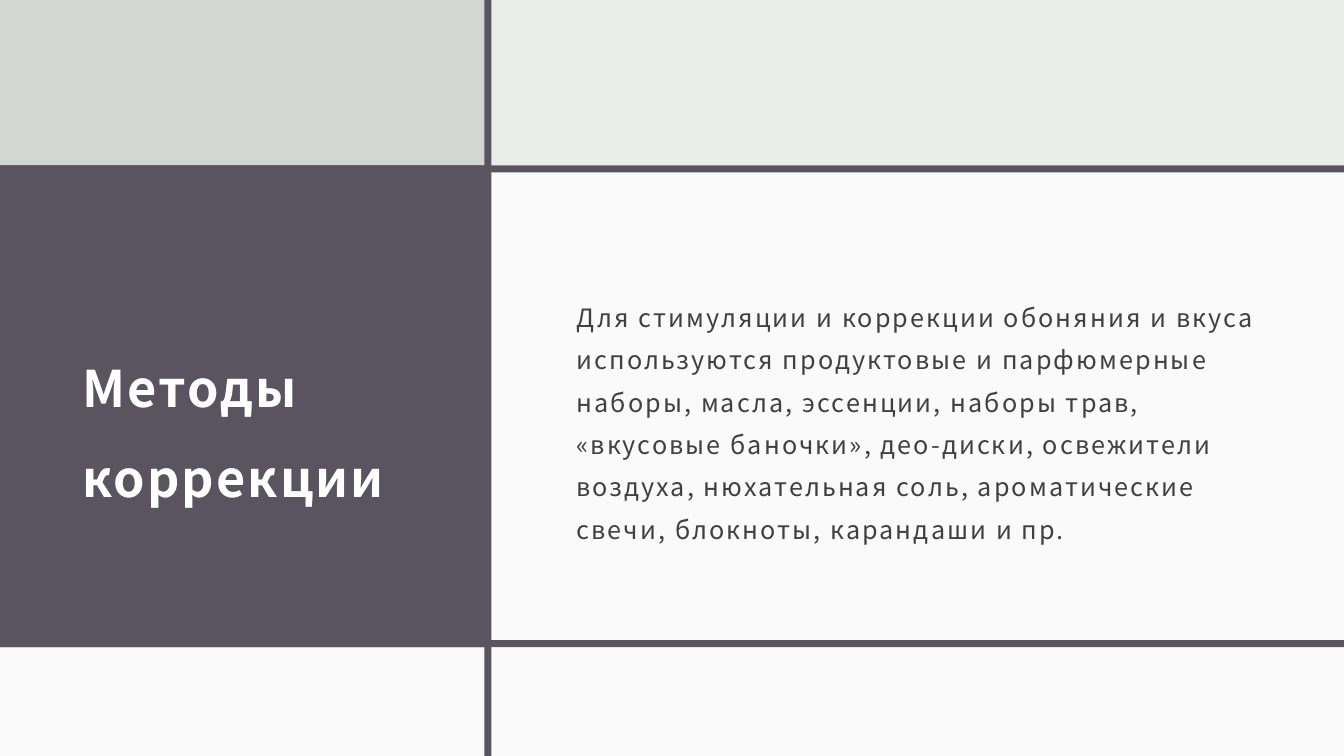
import pptx
import pptx.util
import pptx.dml.color
import pptx.enum.shapes
import pptx.enum.text

Pt = pptx.util.Pt
FONT = "Noto Sans CJK JP"
WIDTH, HEIGHT = 960, 540
RULE = 5.04
COLUMN = 348.5                          # centre of the vertical rule
TOP_RULE, BOTTOM_RULE = 118.08, 457.2   # upper edges of the horizontal rules
DARK, SAGE, MIST, PALE = "595460", "D2D7D2", "EBEDEB", "FAFAFA"


def color(value):
    return pptx.dml.color.RGBColor.from_string(value)


def add_panel(slide, left, top, width, height, fill):
    shape = slide.shapes.add_shape(
        pptx.enum.shapes.MSO_SHAPE.RECTANGLE,
        Pt(left), Pt(top), Pt(width), Pt(height))
    shape.shadow.inherit = False
    shape.fill.solid()
    shape.fill.fore_color.rgb = color(fill)
    shape.line.fill.background()


def add_text(slide, text, left, top, width, height, *, size, fill,
             line_spacing, bold=False, space_before=0, tracking=1.5):
    frame = slide.shapes.add_textbox(
        Pt(left), Pt(top), Pt(width), Pt(height)).text_frame
    frame.word_wrap = True
    frame.vertical_anchor = pptx.enum.text.MSO_ANCHOR.MIDDLE
    frame.margin_left = frame.margin_right = frame.margin_top = Pt(8.64)
    frame.margin_bottom = Pt(7.2)
    paragraph = frame.paragraphs[0]
    paragraph.line_spacing = line_spacing
    paragraph.space_before = Pt(space_before)
    run = paragraph.add_run()
    run.text = text
    run.font.name = FONT
    run.font.size = Pt(size)
    run.font.bold = bold
    run.font.color.rgb = color(fill)
    run._r.get_or_add_rPr().set("spc", str(round(tracking * 100)))


def add_title(slide, left, top, width, height):
    add_panel(slide, left, top, width, height, DARK)
    add_text(slide, "Методы коррекции", left + 50.4, top + 36,
             width - 80, height - 57.6,
             size=36, fill="FFFFFF", bold=True, line_spacing=1.5)


def add_body(slide, left, top, width, height):
    add_panel(slide, left, top, width, height, PALE)
    add_text(slide,
             "Для стимуляции и коррекции обоняния и вкуса используются "
             "продуктовые и парфюмерные наборы, масла, эссенции, наборы трав, "
             "«вкусовые баночки», део-диски, освежители воздуха, нюхательная "
             "соль, ароматические свечи, блокноты, карандаши и пр.",
             left + 54.7, top + 36, width - 105.3, height - 57.6,
             size=18, fill="404040", line_spacing=1.4, space_before=9.3)


def add_rules(slide, left, top, width, height):
    for rule_top in (TOP_RULE, BOTTOM_RULE):
        add_panel(slide, left, top + rule_top, width, RULE, DARK)
    add_panel(slide, left + COLUMN - RULE / 2, top, RULE, height, DARK)


def build_slide(presentation):
    slide = presentation.slides.add_slide(presentation.slide_layouts[6])
    slide.background.fill.solid()
    slide.background.fill.fore_color.rgb = color(MIST)

    # Top and bottom bands
    bottom = BOTTOM_RULE + RULE
    add_panel(slide, 0, 0, COLUMN, TOP_RULE, SAGE)
    add_panel(slide, 0, bottom, WIDTH, HEIGHT - bottom, PALE)

    # Middle row, then the grid lines over it
    row_height = bottom - TOP_RULE
    add_title(slide, 0, TOP_RULE, COLUMN, row_height)
    add_body(slide, COLUMN, TOP_RULE, WIDTH - COLUMN, row_height)
    add_rules(slide, 0, 0, WIDTH, HEIGHT)


def main():
    presentation = pptx.Presentation()
    presentation.slide_width = Pt(WIDTH)
    presentation.slide_height = Pt(HEIGHT)
    build_slide(presentation)
    presentation.save("out.pptx")


if __name__ == "__main__":
    main()
